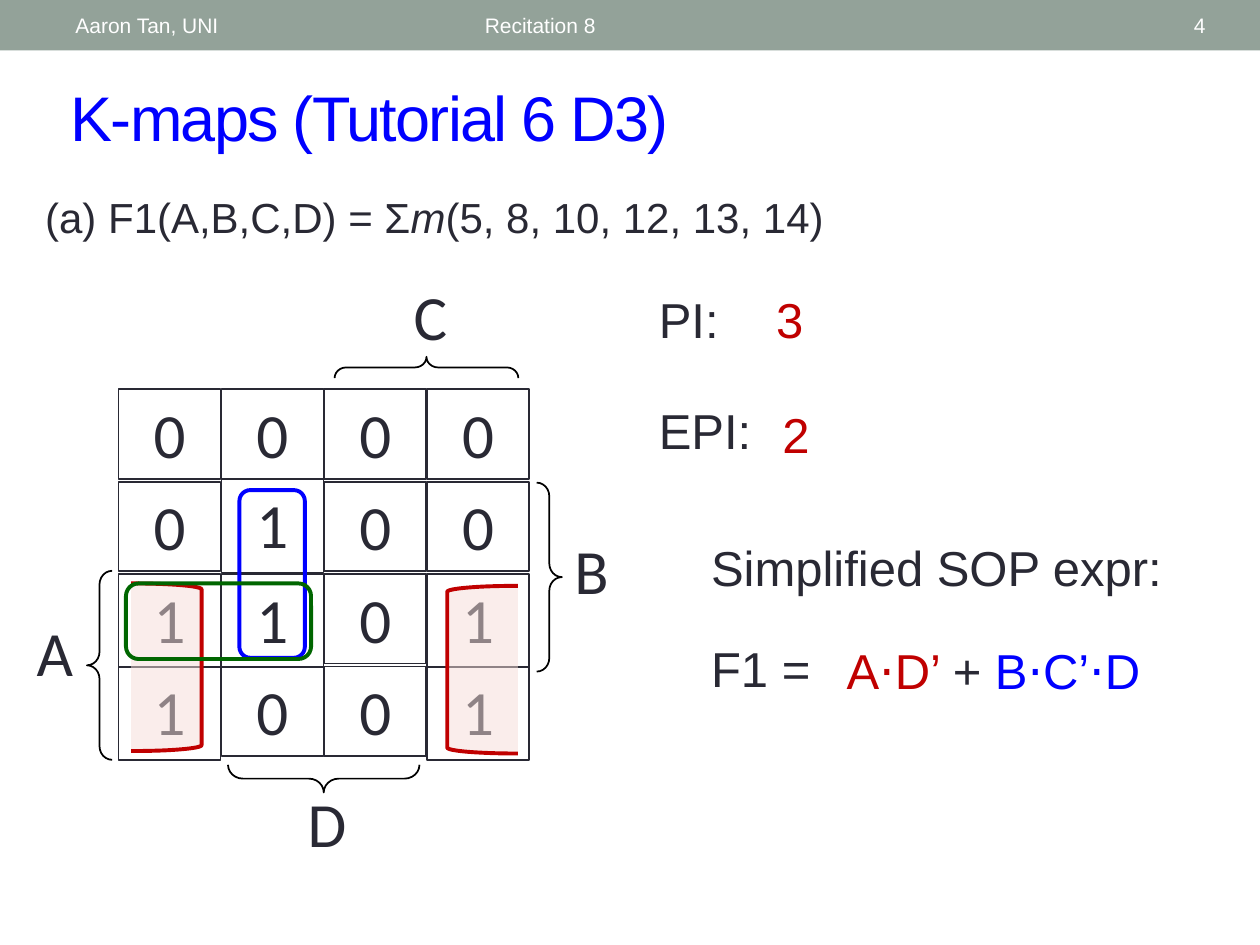
from dataclasses import dataclass

from lxml import etree
from pptx import Presentation
from pptx.dml.color import RGBColor
from pptx.enum.shapes import MSO_SHAPE
from pptx.enum.text import MSO_ANCHOR, MSO_AUTO_SIZE, PP_ALIGN
from pptx.oxml.ns import qn
from pptx.util import Pt

RECT, ROUNDED = MSO_SHAPE.RECTANGLE, MSO_SHAPE.ROUNDED_RECTANGLE
LEFT_BRACE, RIGHT_BRACE = MSO_SHAPE.LEFT_BRACE, MSO_SHAPE.RIGHT_BRACE
LEFT_BRACKET, RIGHT_BRACKET = MSO_SHAPE.LEFT_BRACKET, MSO_SHAPE.RIGHT_BRACKET
TOP, MIDDLE = MSO_ANCHOR.TOP, MSO_ANCHOR.MIDDLE
LEFT, CENTER, RIGHT = PP_ALIGN.LEFT, PP_ALIGN.CENTER, PP_ALIGN.RIGHT
NO_AUTOFIT = MSO_AUTO_SIZE.NONE


@dataclass(frozen=True)
class Theme:
    """Colours, fonts and type sizes of the slide."""
    band: str = "93A299"
    ink: str = "292934"
    black: str = "000000"
    white: str = "FFFFFF"
    blue: str = "0000FF"
    red: str = "C00000"
    green: str = "006600"
    blush: str = "F6DDD8"
    font: str = "Arial"
    map_font: str = "Calibri"
    title: int = 36
    map: int = 36
    answer: int = 28
    function: int = 24
    header: int = 12


THEME = Theme()


def style(run, size, color, font=THEME.font):
    """Format one run."""
    run.font.size = Pt(size)
    run.font.name = font
    run.font.color.rgb = RGBColor.from_string(color)


def write(frame, parts, size, font=THEME.font, align=LEFT, anchor=TOP):
    """Fill a text frame with one paragraph of (text, colour) parts."""
    frame.word_wrap = True
    frame.auto_size = NO_AUTOFIT
    frame.vertical_anchor = anchor
    line = frame.paragraphs[0]
    line.alignment = align
    for words, color in parts:
        run = line.add_run()
        run.text = words
        style(run, size, color, font)
    return line


def add_text(slide, box, parts, size, **options):
    """Add a text box and return its paragraph."""
    label = slide.shapes.add_textbox(*map(Pt, box))
    return write(label.text_frame, parts, size, **options)


def add_outline(slide, kind, box, color, width):
    """Add an unfilled preset shape."""
    outline = slide.shapes.add_shape(kind, *map(Pt, box))
    outline.shadow.inherit = False
    outline.fill.background()
    outline.line.color.rgb = RGBColor.from_string(color)
    outline.line.width = Pt(width)
    return outline


def add_header(slide, box):
    """Place the coloured band with author, session and number."""
    left, top, width, height = box
    band = add_outline(slide, RECT, box, THEME.band, 1)
    band.fill.solid()
    band.fill.fore_color.rgb = RGBColor.from_string(THEME.band)
    band.line.fill.background()
    for x, w, words, align in (
        (36, 228, "Aaron Tan, UNI", LEFT),
        (270, 324, "Recitation 8", LEFT),
        (628, 68, "4", RIGHT),
    ):
        add_text(slide, (left + x, top + 1.4, w, height - 2.8), [(words, THEME.white)],
                 THEME.header, align=align, anchor=MIDDLE)


def add_title(slide, box):
    """Place the slide title in its placeholder."""
    title = slide.shapes.title
    title.left, title.top, title.width, title.height = map(Pt, box)
    heading = write(title.text_frame, [("K-maps (Tutorial 6 D3)", THEME.blue)],
                    THEME.title, anchor=MIDDLE)
    heading.runs[0].font._element.set("spc", "-100")


def add_function(slide, box):
    """Place the function given as a sum of minterms."""
    words = ("(a) F1(A,B,C,D) = Σ", "m", "(5, 8, 10, 12, 13, 14)")
    function = add_text(slide, box, [(part, THEME.ink) for part in words], THEME.function)
    function.space_before = Pt(3)
    function.runs[1].font.italic = True


def add_cells(slide, box):
    """Place the cells of the Karnaugh map."""
    left, top, width, height = box
    step_x, step_y = width / 4, height / 4
    for row, values in enumerate(("0000", "0100", "1101", "1001")):
        for column, value in enumerate(values):
            lift = 1.4 if (row, column) == (1, 1) else 0
            cell_height = 53.3 if value == "1" else 51.1
            place = (left + column * step_x, top + row * step_y - lift, 58.3, cell_height)
            cell = add_outline(slide, RECT, place, THEME.ink, 1)
            write(cell.text_frame, [(value, THEME.ink)], THEME.map,
                  font=THEME.map_font, align=CENTER)


def add_variables(slide, origin):
    """Place the variable names and the braces that span their cells."""
    left, top = origin
    for name, x, y, kind, brace, turn in (
        ("C", 214.6, 0, LEFT_BRACE, (237.6, 2.7, 12.2, 105), 90),
        ("D", 155.5, 290, LEFT_BRACE, (177.1, 235.4, 15.8, 109.4), 270),
        ("A", 0, 192, LEFT_BRACE, (49.7, 171.4, 14.4, 108), 0),
        ("B", 306.7, 145.4, RIGHT_BRACE, (306.7, 121, 14.4, 108), 0),
    ):
        add_text(slide, (left + x, top + y, 62.6, 51.1), [(name, THEME.ink)],
                 THEME.map, font=THEME.map_font, align=CENTER)
        brace_x, brace_y, *size = brace
        span = add_outline(slide, kind, (left + brace_x, top + brace_y, *size), THEME.black, 1)
        span.adjustments[0] = 0.54
        span.rotation = turn


def add_implicants(slide, origin):
    """Place the loops around the prime implicants."""
    left, top = origin
    for kind, x, y, width, height, color in (
        (LEFT_BRACKET, 255.6, 180, 40.3, 95.8, THEME.red),
        (RIGHT_BRACKET, 74.9, 178.6, 40.3, 95.8, THEME.red),
        (ROUNDED, 136.8, 125.3, 37.4, 95.8, THEME.blue),
        (ROUNDED, 72, 178.6, 105.8, 43.2, THEME.green),
    ):
        loop = add_outline(slide, kind, (left + x, top + y, width, height), color, 2.25)
        if color == THEME.red:
            loop.fill.solid()
            loop.fill.fore_color.rgb = RGBColor.from_string(THEME.blush)
            tint = loop.fill._xPr.find(qn("a:solidFill"))[0]
            etree.SubElement(tint, qn("a:alpha")).set("val", "50000")


def add_kmap(slide, origin):
    """Place the whole Karnaugh map."""
    left, top = origin
    add_cells(slide, (left + 67.7, top + 67.7, 235.2, 211.2))
    add_variables(slide, origin)
    add_implicants(slide, origin)


def add_answers(slide, origin):
    """Place the implicant counts and the simplified expression."""
    left, top = origin
    expression = [("A⋅D’ ", THEME.red), ("+ ", THEME.ink), ("B⋅C’⋅D", THEME.blue)]
    for x, y, width, parts in (
        (0, 0, 78.5, [("PI:", THEME.ink)]),
        (0, 63.4, 78.5, [("EPI:", THEME.ink)]),
        (67, 0, 46.8, [("3", THEME.red)]),
        (70.6, 65.5, 46.8, [("2", THEME.red)]),
        (29.9, 141.8, 297.4, [("Simplified SOP expr:", THEME.ink)]),
        (29.9, 199.4, 93.6, [("F1 =", THEME.ink)]),
        (107.3, 200.2, 193.7, expression),
    ):
        add_text(slide, (left + x, top + y, width, 41), parts, THEME.answer)


def main():
    """Build and save the slide."""
    deck = Presentation()
    deck.slide_width, deck.slide_height = Pt(720), Pt(540)
    slide = deck.slides.add_slide(deck.slide_layouts[5])
    add_header(slide, (0, 0, 720, 28.8))
    add_title(slide, (33.1, 41, 663.1, 50.4))
    add_function(slide, (18.7, 105.8, 502.6, 50.4))
    add_kmap(slide, (0, 154.8))
    add_answers(slide, (369.4, 162))
    deck.save("out.pptx")


if __name__ == "__main__":
    main()
